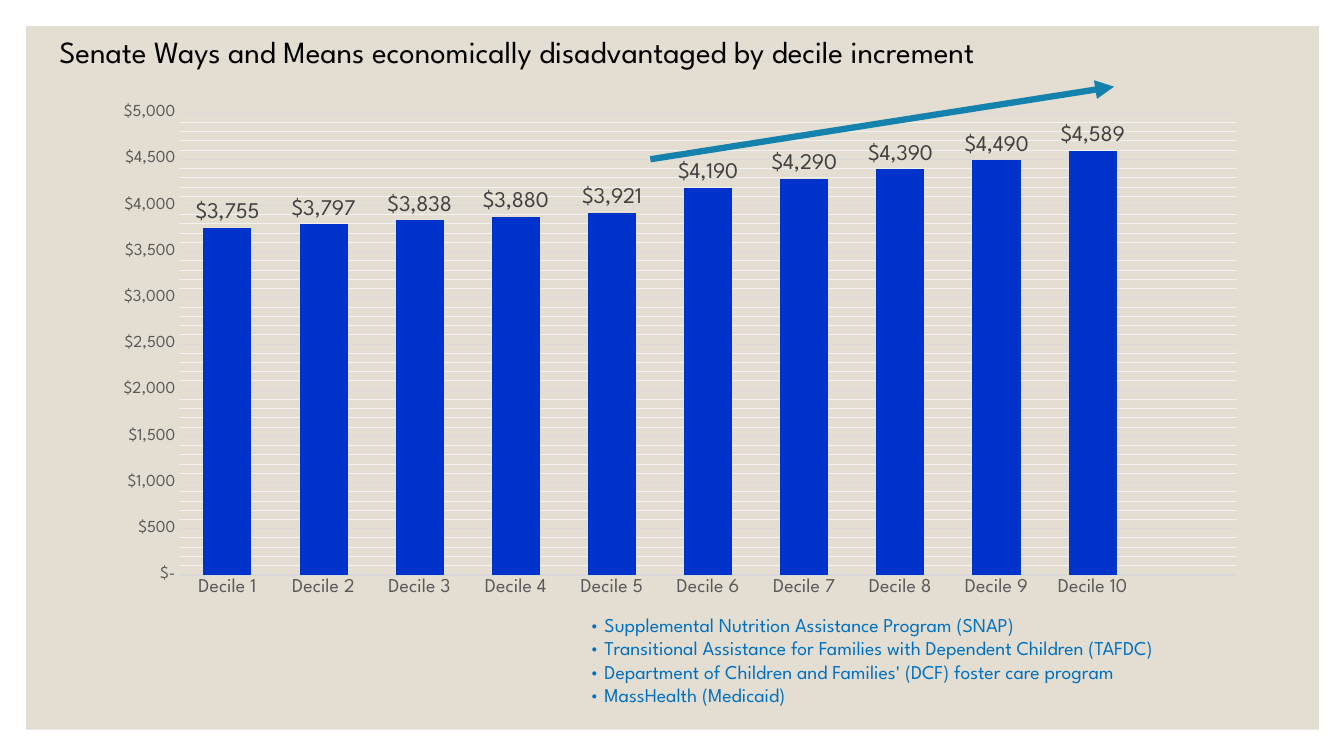
from lxml.etree import SubElement
from pptx import Presentation
from pptx.chart.data import CategoryChartData
from pptx.dml.color import RGBColor
from pptx.enum.chart import XL_CHART_TYPE, XL_LABEL_POSITION, XL_TICK_MARK
from pptx.enum.shapes import MSO_CONNECTOR, MSO_SHAPE
from pptx.oxml import parse_xml
from pptx.oxml.ns import nsdecls, qn
from pptx.util import Inches, Pt

FONT = "League Spartan"
MONEY = '"$"#,##0;;"$-"'
AMOUNTS = [3755, 3797, 3838, 3880, 3921, 4190, 4290, 4390, 4490, 4589]
PROGRAMS = [
    "• Supplemental Nutrition Assistance Program (SNAP)",
    "• Transitional Assistance for Families with Dependent Children (TAFDC)",
    "• Department of Children and Families' (DCF) foster care program",
    "• MassHealth (Medicaid)",
]


def color(code):
    return RGBColor.from_string(code)


def style(font, size, code):
    font.name = FONT
    font.size = Pt(size)
    font.color.rgb = color(code)


def add_panel(slide, x, y, w, h):
    panel = slide.shapes.add_shape(
        MSO_SHAPE.RECTANGLE, Inches(x), Inches(y), Inches(w), Inches(h))
    panel.shadow.inherit = False
    panel.fill.solid()
    panel.fill.fore_color.rgb = color("E3DED1")
    panel.line.fill.background()


def add_text(slide, x, y, w, h, lines, size, code):
    box = slide.shapes.add_textbox(Inches(x), Inches(y), Inches(w), Inches(h))
    frame = box.text_frame
    frame.word_wrap = True
    frame.text = "\n".join(lines)
    for para in frame.paragraphs:
        style(para.font, size, code)


def set_plot(chart, x, y, w, h):
    """Fix the inner plot area, in fractions of the chart."""
    area = chart.plots[0]._element.getparent()
    for old in area.findall(qn("c:layout")):
        area.remove(old)
    parts = [("layoutTarget", "inner"), ("xMode", "edge"), ("yMode", "edge"),
             ("x", x), ("y", y), ("w", w), ("h", h)]
    layout = parse_xml(f"<c:layout {nsdecls('c')}/>")
    manual = SubElement(layout, qn("c:manualLayout"))
    for tag, value in parts:
        SubElement(manual, qn(f"c:{tag}")).set("val", str(value))
    area.insert(0, layout)


def style_minor(axis, code, width):
    """Colour the minor gridlines."""
    axis.has_minor_gridlines = True
    grid = axis._element.find(qn("c:minorGridlines"))
    grid.append(parse_xml(
        f'<c:spPr {nsdecls("c", "a")}><a:ln w="{Pt(width)}"><a:solidFill>'
        f'<a:srgbClr val="{code}"/></a:solidFill></a:ln></c:spPr>'))


def style_axes(chart):
    names, money = chart.category_axis, chart.value_axis
    for axis, size in ((names, 14), (money, 12)):
        axis.major_tick_mark = axis.minor_tick_mark = XL_TICK_MARK.NONE
        style(axis.tick_labels.font, size, "595959")
    names.format.line.color.rgb = color("D9D9D9")
    names.format.line.width = Pt(1)
    money.format.line.fill.background()
    money.minimum_scale, money.maximum_scale = 0, 5000
    money.major_unit, money.minor_unit = 500, 100
    money.has_major_gridlines = True
    money.major_gridlines.format.line.color.rgb = color("D9D9D9")
    money.major_gridlines.format.line.width = Pt(0.75)
    style_minor(money, "F2F2F2", 0.75)
    money.tick_labels.number_format = MONEY
    money.tick_labels.number_format_is_linked = False


def add_bars(slide, x, y, w, h):
    data = CategoryChartData()
    data.categories = [f"Decile {n}" for n in range(1, 11)] + [""]
    data.add_series("Series 1", AMOUNTS + [None])
    chart = slide.shapes.add_chart(
        XL_CHART_TYPE.COLUMN_CLUSTERED,
        Inches(x), Inches(y), Inches(w), Inches(h), data).chart
    chart.has_title = chart.has_legend = False
    style(chart.font, 10, "000000")
    style_axes(chart)
    set_plot(chart, 0.075, 0.034, 0.905, 0.902)

    plot = chart.plots[0]
    plot.vary_by_categories = False
    plot.gap_width, plot.overlap = 100, -24
    bars = plot.series[0]
    bars.format.fill.solid()
    bars.format.fill.fore_color.rgb = color("0033CC")
    labels = bars.data_labels
    labels.show_value = True
    labels.position = XL_LABEL_POSITION.OUTSIDE_END
    labels.number_format = MONEY
    labels.number_format_is_linked = False
    style(labels.font, 16, "404040")


def add_arrow(slide, x, y, w, h):
    """Draw the trend from the lower left to the upper right of its box."""
    arrow = slide.shapes.add_connector(
        MSO_CONNECTOR.STRAIGHT,
        Inches(x), Inches(y + h), Inches(x + w), Inches(y))
    arrow.line.color.rgb = color("1482AC")
    arrow.line.width = Pt(4.5)
    SubElement(arrow.line._get_or_add_ln(), qn("a:tailEnd")).set(
        "type", "triangle")
    SubElement(arrow._element.spPr, qn("a:effectLst"))


def main():
    deck = Presentation()
    deck.slide_width, deck.slide_height = Inches(13.33), Inches(7.5)
    slide = deck.slides.add_slide(deck.slide_layouts[6])
    add_panel(slide, 0.26, 0.26, 12.82, 6.98)
    add_bars(slide, 0.91, 0.95, 11.59, 5.08)
    title = ("Senate Ways and Means economically disadvantaged "
             "by decile increment")
    add_text(slide, 0.49, 0.28, 12.43, 0.47, [title], 22, "000000")
    add_text(slide, 5.75, 6.03, 7.5, 1.04, PROGRAMS, 14, "0070C0")
    add_arrow(slide, 6.45, 0.86, 4.6, 0.72)
    deck.save("out.pptx")


if __name__ == "__main__":
    main()
